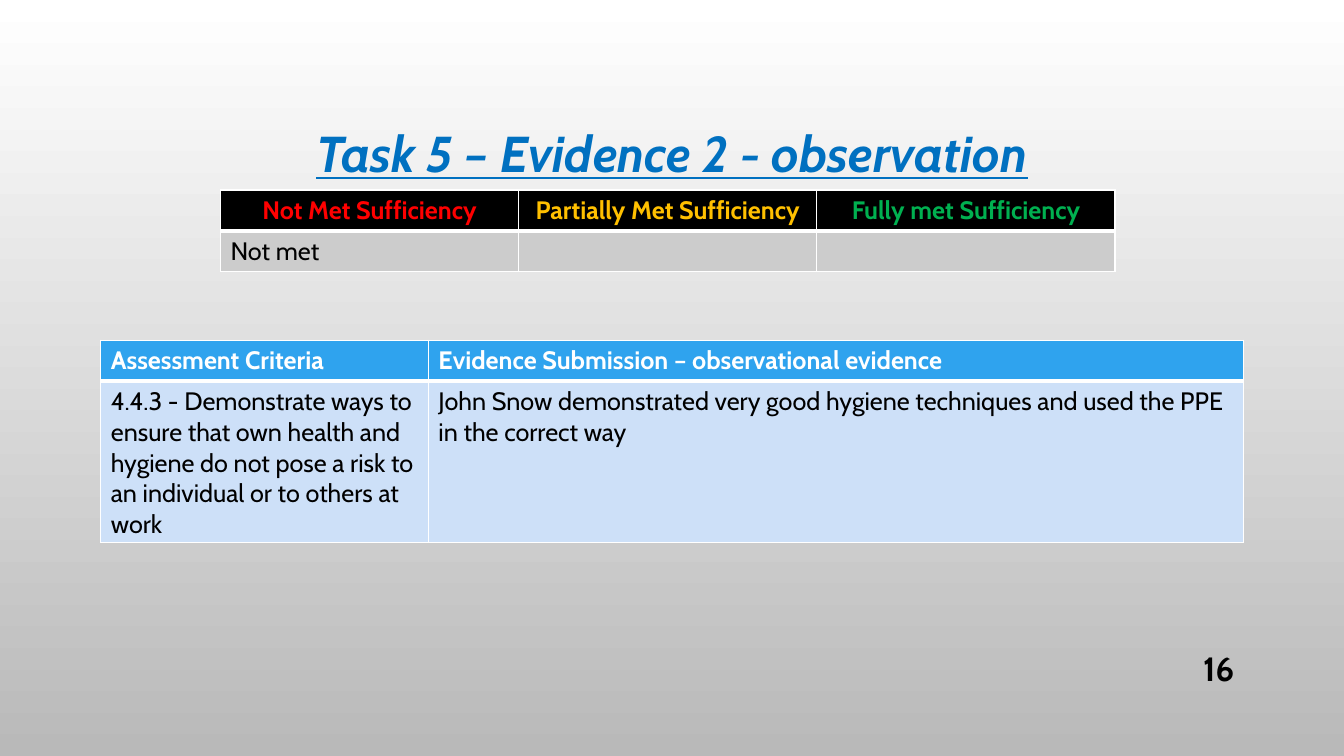
from lxml.etree import SubElement
from pptx import Presentation
from pptx.dml.color import RGBColor
from pptx.enum.text import MSO_ANCHOR, PP_ALIGN
from pptx.oxml.ns import qn
from pptx.util import Pt

PX = 9525
FONT = "Cabin"
WHITE = RGBColor(0xFF, 0xFF, 0xFF)
BLACK = RGBColor(0, 0, 0)
BACK_GREY = RGBColor(0xB9, 0xB9, 0xB9)
TITLE_BLUE = RGBColor(0x00, 0x70, 0xC0)
RED = RGBColor(0xFF, 0, 0)
AMBER = RGBColor(0xFF, 0xC0, 0)
GREEN = RGBColor(0, 0xB0, 0x50)
ROW_GREY = RGBColor(0xCC, 0xCC, 0xCC)
HEAD_BLUE = RGBColor(0x2F, 0xA3, 0xEE)
ROW_BLUE = RGBColor(0xCD, 0xE0, 0xF8)


def emu(*lengths):
    return [n * PX for n in lengths]


def style_text(tf, size, color, bold=False, align=PP_ALIGN.LEFT):
    for p in tf.paragraphs:
        p.alignment = align
        p.font.size = Pt(size)
        for r in p.runs:
            r.font.name = FONT
            r.font.size = Pt(size)
            r.font.bold = bold
            r.font.color.rgb = color


def set_borders(cell, top, bottom):
    tc_pr = cell._tc.get_or_add_tcPr()
    for side, width in (("L", 1), ("R", 1), ("T", top), ("B", bottom)):
        ln = SubElement(tc_pr, qn(f"a:ln{side}"), w=str(Pt(width)))
        fill = SubElement(ln, qn("a:solidFill"))
        SubElement(fill, qn("a:srgbClr"), val=str(WHITE))


def add_background(s):
    fill = s.background.fill
    fill.gradient()
    fill.gradient_angle = 270
    for stop, color in zip(fill.gradient_stops, (WHITE, BACK_GREY)):
        stop.color.rgb = color


def add_title(s, box, text):
    sp = s.shapes.title
    sp.left, sp.top, sp.width, sp.height = emu(*box)
    tf = sp.text_frame
    tf.text = text
    tf.vertical_anchor = MSO_ANCHOR.MIDDLE
    style_text(tf, 36, TITLE_BLUE, True, PP_ALIGN.CENTER)
    p = tf.paragraphs[0]
    p.line_spacing = 0.9
    p.runs[0].font.italic = True
    p.runs[0].font.underline = True


def add_page_number(s, box, text):
    tf = s.shapes.add_textbox(*emu(*box)).text_frame
    tf.word_wrap = True
    tf.text = text
    tf.vertical_anchor = MSO_ANCHOR.MIDDLE
    style_text(tf, 24, BLACK, True, PP_ALIGN.RIGHT)


def add_criteria_table(s, left, top, widths, heights, rows, fills, head_colors, head_align):
    box = emu(left, top, sum(widths), sum(heights))
    table = s.shapes.add_table(len(rows), len(widths), *box).table
    for column, width in zip(table.columns, widths):
        column.width = width * PX
    for i, (row, height) in enumerate(zip(rows, heights)):
        table.rows[i].height = height * PX
        head = i == 0
        for j, text in enumerate(row):
            cell = table.cell(i, j)
            set_borders(cell, 1 if head else 3, 3 if head else 1)
            cell.fill.solid()
            cell.fill.fore_color.rgb = fills[i]
            cell.text_frame.text = text
            style_text(cell.text_frame, 18, head_colors[j] if head else BLACK,
                       head, head_align if head else PP_ALIGN.LEFT)


def build_evidence_slide(prs):
    s = prs.slides.add_slide(prs.slide_layouts[5])
    add_background(s)
    add_title(s, (96, 65, 1088, 168), "Task 5 – Evidence 2 - observation")
    add_page_number(s, (1104, 617, 81, 38), "16")
    add_criteria_table(
        s, 210, 181, [284] * 3, [39, 39],
        [["Not Met Sufficiency", "Partially Met Sufficiency", "Fully met Sufficiency"],
         ["Not met", "", ""]],
        (BLACK, ROW_GREY), (RED, AMBER, GREEN), PP_ALIGN.CENTER)
    add_criteria_table(
        s, 96, 324, [312, 776], [39, 154],
        [["Assessment Criteria", "Evidence Submission – observational evidence"],
         ["4.4.3 - Demonstrate ways to ensure that own health and hygiene do not "
          "pose a risk to an individual or to others at work",
          "John Snow demonstrated very good hygiene techniques and used the PPE "
          "in the correct way"]],
        (HEAD_BLUE, ROW_BLUE), (WHITE, WHITE), PP_ALIGN.LEFT)


def main():
    prs = Presentation()
    prs.slide_width, prs.slide_height = emu(1280, 720)
    build_evidence_slide(prs)
    prs.save("out.pptx")


if __name__ == "__main__":
    main()
